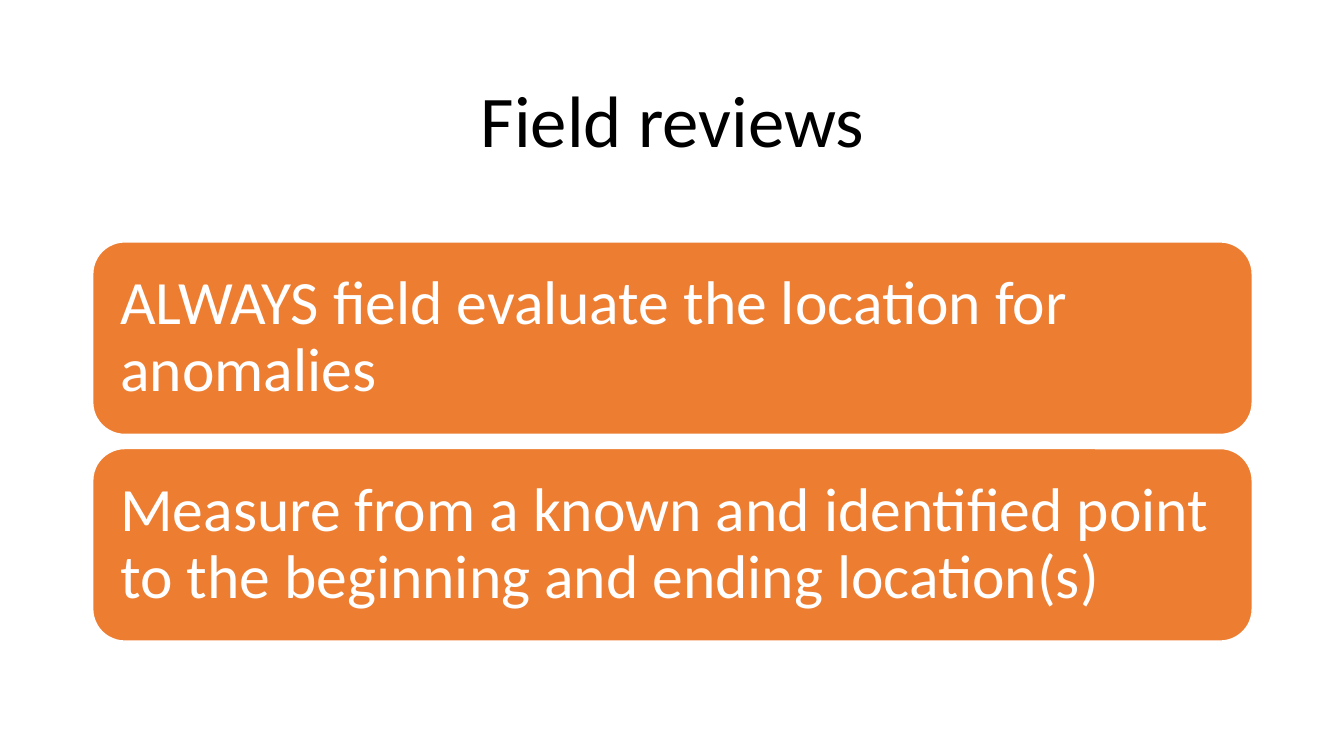
"""Build the field reviews slide with its two stacked instruction cards."""
from dataclasses import dataclass

import pptx
import pptx.dml.color
import pptx.enum.shapes
import pptx.enum.text
import pptx.slide
import pptx.text.text
import pptx.util
from pptx.util import Inches

COLORS = {"title": "000000", "card": "ED7D31", "white": "FFFFFF"}
FONT = "Calibri"
LEFT, WIDTH = 0.92, 11.5
CARD_TOP, CARD_HEIGHT, CARD_GAP = 2.4, 1.91, 0.14
CARD_INSET = 0.18


@dataclass
class Card:
    text: str
    top: float


def rgb(name: str) -> pptx.dml.color.RGBColor:
    return pptx.dml.color.RGBColor.from_string(COLORS[name])


def set_text(tf: pptx.text.text.TextFrame, text: str, size: int, color: str,
             align: pptx.enum.text.PP_ALIGN) -> None:
    tf.text = text
    tf.word_wrap = True
    tf.auto_size = pptx.enum.text.MSO_AUTO_SIZE.NONE
    tf.vertical_anchor = pptx.enum.text.MSO_ANCHOR.MIDDLE
    p = tf.paragraphs[0]
    p.alignment = align
    p.line_spacing = 0.9
    r = p.runs[0]
    r.font.name = FONT
    r.font.size = pptx.util.Pt(size)
    r.font.color.rgb = rgb(color)


def add_title(s: pptx.slide.Slide, text: str) -> None:
    sp = s.shapes.title
    sp.left, sp.top = Inches(LEFT), Inches(0.61)
    sp.width, sp.height = Inches(WIDTH), Inches(1.24)
    set_text(sp.text_frame, text, 52, "title", pptx.enum.text.PP_ALIGN.CENTER)


def add_card(s: pptx.slide.Slide, card: Card) -> None:
    sp = s.shapes.add_shape(
        pptx.enum.shapes.MSO_SHAPE.ROUNDED_RECTANGLE,
        Inches(LEFT), Inches(card.top), Inches(WIDTH), Inches(CARD_HEIGHT))
    sp.shadow.inherit = False
    sp.fill.solid()
    sp.fill.fore_color.rgb = rgb("card")
    sp.line.color.rgb = rgb("white")
    sp.line.width = pptx.util.Pt(1)
    tf = sp.text_frame
    tf.margin_left = tf.margin_right = Inches(CARD_INSET)
    tf.margin_top = tf.margin_bottom = Inches(CARD_INSET)
    set_text(tf, card.text, 44, "white", pptx.enum.text.PP_ALIGN.LEFT)


def main() -> None:
    prs = pptx.Presentation()
    prs.slide_width, prs.slide_height = Inches(13.33), Inches(7.5)
    s = prs.slides.add_slide(prs.slide_layouts.get_by_name("Title Only"))
    add_title(s, "Field reviews")
    instructions = [
        "ALWAYS field evaluate the location for anomalies",
        "Measure from a known and identified point to the beginning and ending location(s)",
    ]
    for i, text in enumerate(instructions):
        add_card(s, Card(text, CARD_TOP + i * (CARD_HEIGHT + CARD_GAP)))
    prs.save("out.pptx")


if __name__ == "__main__":
    main()
